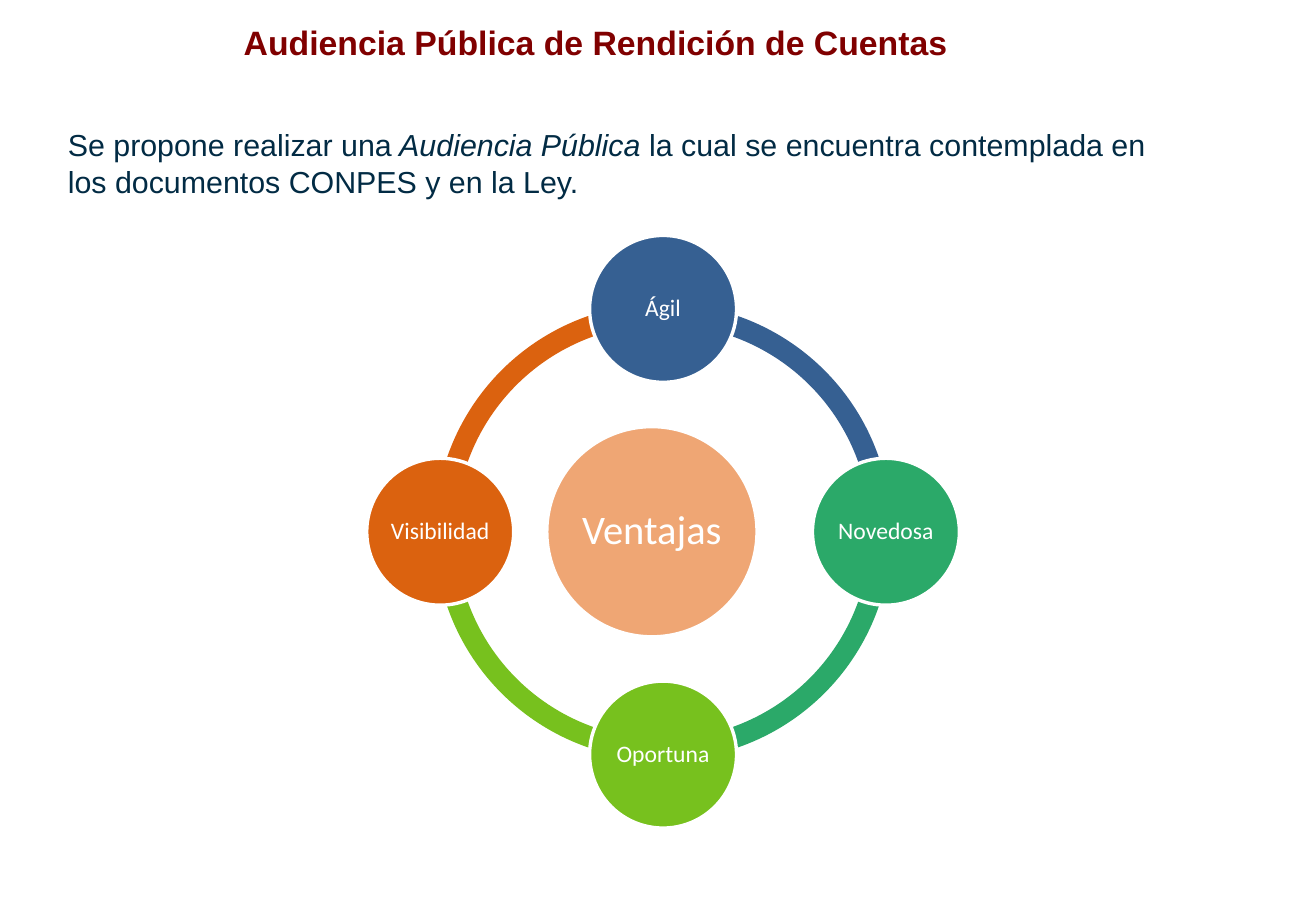
from math import cos, radians, sin

from pptx import Presentation
from pptx.dml.color import RGBColor
from pptx.enum.shapes import MSO_SHAPE
from pptx.enum.text import MSO_ANCHOR, PP_ALIGN
from pptx.util import Pt

COLORS = {
    "title": "800000", "body": "022B44", "white": "FFFFFF", "hub": "EFA674",
    "agil": "366092", "novedosa": "2BA969", "oportuna": "77C11E", "visibilidad": "DB620F",
}
ADVANTAGES = [
    ("Ágil", "agil", 270),
    ("Novedosa", "novedosa", 0),
    ("Oportuna", "oportuna", 90),
    ("Visibilidad", "visibilidad", 180),
]
CENTER_X, CENTER_Y = 393, 315.2
ORBIT = 132.1
RING_SIZE, HUB_SIZE, NODE_SIZE = 270.7, 124.6, 87.1
HUB_X = 386.4
ANGLE_UNIT = 0.6


def rgb(name):
    return RGBColor.from_string(COLORS[name])


def write(frame, paragraphs, font="Arial", size=18, color="body", bold=False,
          align=PP_ALIGN.LEFT, anchor=MSO_ANCHOR.TOP, spacing=1.0, inset=None):
    frame.word_wrap = True
    frame.vertical_anchor = anchor
    if inset is not None:
        frame.margin_left = frame.margin_right = Pt(inset)
        frame.margin_top = frame.margin_bottom = Pt(inset)
    for index, runs in enumerate(paragraphs):
        paragraph = frame.add_paragraph() if index else frame.paragraphs[0]
        paragraph.alignment = align
        paragraph.line_spacing = spacing
        for words, italic in runs:
            run = paragraph.add_run()
            run.text = words
            run.font.name = font
            run.font.size = Pt(size)
            run.font.bold = bold
            run.font.italic = italic
            run.font.color.rgb = rgb(color)


class Board:
    def __init__(self, slide, label_font="Calibri"):
        self.slide = slide
        self.label_font = label_font

    def text(self, left, top, width, height, paragraphs, **style):
        box = self.slide.shapes.add_textbox(Pt(left), Pt(top), Pt(width), Pt(height))
        write(box.text_frame, paragraphs, **style)

    def shape(self, kind, x, y, size, color):
        figure = self.slide.shapes.add_shape(
            kind, Pt(x - size / 2), Pt(y - size / 2), Pt(size), Pt(size))
        figure.shadow.inherit = False
        figure.fill.solid()
        figure.fill.fore_color.rgb = rgb(color)
        return figure

    def arc(self, start, color):
        arc = self.shape(MSO_SHAPE.BLOCK_ARC, CENTER_X, CENTER_Y, RING_SIZE, color)
        arc.line.fill.background()
        end = (start + 90) % 360
        for index, value in enumerate((start * ANGLE_UNIT, end * ANGLE_UNIT, 0.046)):
            arc.adjustments[index] = value

    def circle(self, x, y, size, color, label, font_size):
        circle = self.shape(MSO_SHAPE.OVAL, x, y, size, color)
        circle.line.color.rgb = rgb("white")
        circle.line.width = Pt(2)
        write(circle.text_frame, [[(label, False)]], font=self.label_font, size=font_size,
              color="white", align=PP_ALIGN.CENTER, anchor=MSO_ANCHOR.MIDDLE,
              spacing=0.9, inset=1.5)


def main():
    deck = Presentation()
    deck.slide_width, deck.slide_height = Pt(780), Pt(540)
    board = Board(deck.slides.add_slide(deck.slide_layouts[6]))

    board.text(33.1, 71.3, 678.2, 51, [
        [("Se propone realizar una", False), (" Audiencia Pública ", True),
         ("la cual se encuentra contemplada en", False)],
        [("los documentos CONPES y en la Ley.", False)],
    ])
    for _, color, angle in reversed(ADVANTAGES):
        board.arc(angle, color)
    board.circle(HUB_X, CENTER_Y, HUB_SIZE, "hub", "Ventajas", 24)
    for label, color, angle in ADVANTAGES:
        x = CENTER_X + ORBIT * cos(radians(angle))
        y = CENTER_Y + ORBIT * sin(radians(angle))
        board.circle(x, y, NODE_SIZE, color, label, 14)
    board.text(106.6, 9.4, 493.2, 31.7,
               [[("Audiencia Pública de Rendición de Cuentas", False)]],
               size=20, color="title", bold=True, align=PP_ALIGN.CENTER)

    deck.save("out.pptx")


if __name__ == "__main__":
    main()
